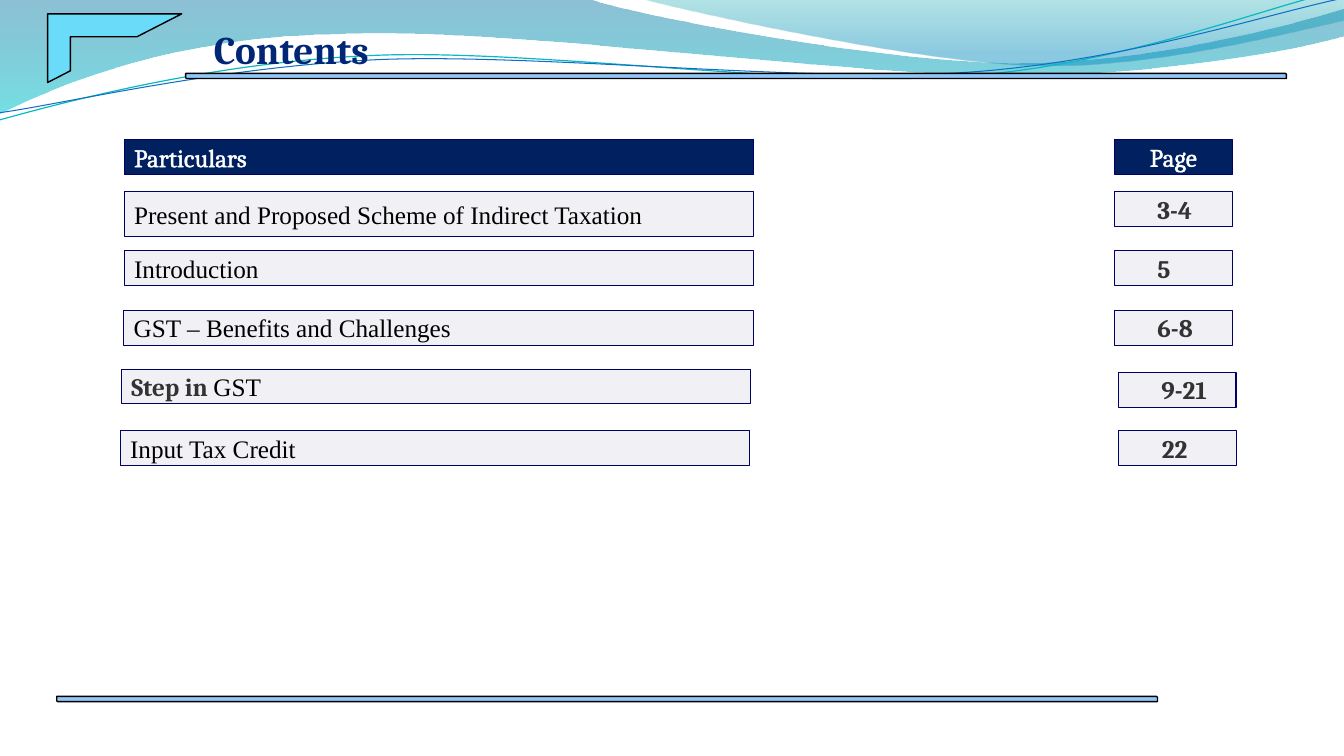
from dataclasses import dataclass

from lxml.etree import SubElement
from pptx import Presentation
from pptx.dml.color import RGBColor
from pptx.enum.shapes import MSO_SHAPE
from pptx.enum.text import MSO_ANCHOR, MSO_AUTO_SIZE, PP_ALIGN
from pptx.oxml import parse_xml
from pptx.oxml.ns import nsdecls, qn
from pptx.shapes.autoshape import Shape
from pptx.slide import Slide
from pptx.text.text import _Run as Span
from pptx.util import Cm, Pt

Point = tuple[float, float]


@dataclass(frozen=True)
class Theme:
    serif: str = "Cambria"
    body: str = "Times New Roman"
    title: str = "002776"
    header: str = "002060"
    cell: str = "F1F1F5"
    border: str = "000066"
    white: str = "FFFFFF"
    black: str = "000000"
    grey: str = "333333"
    bar: str = "91C6F7"
    corner: str = "6BDBFA"
    title_size: int = 28
    text_size: int = 18


THEME = Theme()


@dataclass(frozen=True)
class Wave:
    start: Point
    segments: tuple[tuple[Point, ...], ...]  # one point: line, three: Bézier curve
    stops: tuple[tuple[int, str, int], ...] = ()  # position, colour, opacity
    line: str = ""
    width: float = 0


@dataclass(frozen=True)
class Words:
    text: str
    font: str = THEME.body
    colour: str = THEME.black
    bold: bool = False


@dataclass(frozen=True)
class Entry:
    words: tuple[Words, ...]
    left: float
    top: float
    page: str
    page_left: float
    page_top: float
    height: float = 0.88


ROW_WIDTH, PAGE_WIDTH, ROW_HEIGHT = 15.86, 2.96, 0.88
INSET, PAGE_INSET = 0.25, 1.08

WAVES = (
    Wave((0, 0), (
        ((14.91, 0),),
        ((16.1, 0.43), (22.48, 1.6), (25.68, 1.6)),
        ((28.91, 1.6), (32.46, 0.66), (33.87, 0.23)),
        ((33.87, 0.91),),
        ((33.3, 1.12), (29.46, 1.93), (25.25, 1.9)),
        ((21.06, 1.9), (12.93, 0.71), (8.71, 0.86)),
        ((4.37, 0.91), (1.55, 2.11), (0, 2.87)),
    ), stops=((0, "0074A1", 45), (100, "00C6CF", 55))),
    Wave((16.23, 0), (
        ((17.25, 0.28), (23.09, 1.57), (26.04, 1.65)),
        ((28.98, 1.75), (32.56, 0.81), (33.87, 0.53)),
        ((33.87, 0),),
    ), stops=((0, "00A1A9", 30), (80, "008BBF", 45))),
    Wave((0, 3.02), (
        ((1.63, 2.57), (5.36, 1.57), (9.37, 1.4)),
        ((13.39, 1.22), (20.07, 2.21), (24.13, 1.93)),
        ((28.19, 1.68), (31.8, 0.2), (33.81, -0.25)),
    ), line="0AB8BF", width=0.85),
    Wave((0, 2.84), (
        ((1.6, 2.62), (5.54, 1.68), (9.6, 1.5)),
        ((13.64, 1.35), (20.22, 2.08), (24.26, 1.83)),
        ((28.32, 1.57), (31.88, 0.36), (33.87, -0.05)),
    ), line="0F6FC6", width=0.75),
)

ENTRIES = (
    Entry((Words("Present and Proposed Scheme of Indirect Taxation"),),
          3.13, 4.83, "3-4", 28.09, 4.83, height=1.14),
    Entry((Words("Introduction"),), 3.13, 6.32, "5", 28.09, 6.32),
    Entry((Words("GST – Benefits and Challenges"),), 3.12, 7.82, "6-8", 28.09, 7.82),
    Entry((Words("Step in ", THEME.serif, THEME.grey, True), Words("GST")),
          3.06, 9.3, "9-21", 28.19, 9.38),
    Entry((Words("Input Tax Credit"),), 3.03, 10.86, "22", 28.2, 10.85),
)


def colour(value: str) -> RGBColor:
    return RGBColor.from_string(value)


def fill_gradient(shape: Shape, stops: tuple[tuple[int, str, int], ...]) -> None:
    shape.fill.background()
    marks = "".join(
        f'<a:gs pos="{position * 1000}"><a:srgbClr val="{value}">'
        f'<a:alpha val="{opacity * 1000}"/></a:srgbClr></a:gs>'
        for position, value, opacity in stops)
    gradient = parse_xml(f'<a:gradFill {nsdecls("a")} rotWithShape="1"><a:gsLst>{marks}'
                         '</a:gsLst><a:lin ang="5400000" scaled="0"/></a:gradFill>')
    properties = shape._element.spPr
    properties.replace(properties.find(qn("a:noFill")), gradient)


def bend_segments(shape: Shape, segments: tuple[tuple[Point, ...], ...]) -> None:
    """Turn the straight sides that have control points into Bézier curves."""
    sides = list(shape._element.spPr.iter(qn("a:lnTo")))
    for side, segment in zip(sides, segments):
        if len(segment) == 3:
            bend = parse_xml(f'<a:cubicBezTo {nsdecls("a")}/>')
            for x, y in segment:
                SubElement(bend, qn("a:pt"), x=str(Cm(x) - shape.left),
                           y=str(Cm(y) - shape.top))
            side.getparent().replace(side, bend)


def draw_wave(page: Slide, wave: Wave) -> None:
    start, *ends = [(Cm(x), Cm(y)) for x, y in
                    (wave.start, *(segment[-1] for segment in wave.segments))]
    builder = page.shapes.build_freeform(*start)
    builder.add_line_segments(ends, close=bool(wave.stops))
    shape = builder.convert_to_shape()
    bend_segments(shape, wave.segments)
    shape.shadow.inherit = False
    if wave.stops:
        fill_gradient(shape, wave.stops)
        shape.line.fill.background()
    else:
        shape.fill.background()
        shape.line.color.rgb = colour(wave.line)
        shape.line.width = Pt(wave.width)


def draw_shape(page: Slide, kind: MSO_SHAPE, left: float, top: float, width: float,
               height: float, fill: str, line: str, weight: float) -> Shape:
    shape = page.shapes.add_shape(kind, Cm(left), Cm(top), Cm(width), Cm(height))
    shape.shadow.inherit = False
    shape.fill.solid()
    shape.fill.fore_color.rgb = colour(fill)
    shape.line.color.rgb = colour(line)
    shape.line.width = Pt(weight)
    return shape


def format_span(span: Span, words: Words, size: int) -> None:
    span.font.name, span.font.size, span.font.bold = words.font, Pt(size), words.bold
    span.font.color.rgb = colour(words.colour)


def draw_cell(page: Slide, words: tuple[Words, ...], left: float, top: float, width: float,
              height: float = ROW_HEIGHT, fill: str = THEME.cell, inset: float = INSET,
              align: PP_ALIGN = PP_ALIGN.LEFT) -> Shape:
    box = draw_shape(page, MSO_SHAPE.RECTANGLE, left, top, width, height,
                     fill, THEME.border, 0.75)
    frame = box.text_frame
    frame.word_wrap = True
    frame.vertical_anchor = MSO_ANCHOR.MIDDLE
    frame.margin_left, frame.margin_right = Cm(inset), Cm(INSET)
    frame.margin_top = frame.margin_bottom = 0
    para = frame.paragraphs[0]
    para.alignment = align
    for part in words:
        span = para.add_run()
        span.text = part.text
        format_span(span, part, THEME.text_size)
    return box


def draw_header(page: Slide, text: str, left: float, top: float, width: float,
                align: PP_ALIGN) -> None:
    words = (Words(text, THEME.serif, THEME.white),)
    box = draw_cell(page, words, left, top, width, fill=THEME.header, align=align)
    # White outline around the letters
    properties = box.text_frame.paragraphs[0].runs[0].font._element
    outline = SubElement(properties, qn("a:ln"), w=str(Pt(1.45)))
    SubElement(SubElement(outline, qn("a:solidFill")), qn("a:srgbClr"), val=THEME.white)
    properties.insert(0, outline)


def draw_title(page: Slide) -> None:
    title = page.shapes.title
    title.left, title.top, title.width, title.height = Cm(5.14), Cm(0.78), Cm(28), Cm(0.91)
    frame = title.text_frame
    frame.text = "Contents"
    frame.auto_size = MSO_AUTO_SIZE.NONE
    frame.vertical_anchor = MSO_ANCHOR.TOP
    frame.margin_left, frame.margin_top, frame.margin_bottom = Cm(INSET), Cm(0.13), 0
    para = frame.paragraphs[0]
    para.alignment, para.line_spacing = PP_ALIGN.LEFT, Pt(26)
    format_span(para.runs[0], Words("", THEME.serif, THEME.title, True), THEME.title_size)
    page.shapes._spTree.append(title._element)  # in front of the waves


def main() -> None:
    deck = Presentation()
    deck.slide_width, deck.slide_height = Cm(33.87), Cm(19.05)
    page = deck.slides.add_slide(deck.slide_layouts[5])

    # Waves, title and frame
    for wave in WAVES:
        draw_wave(page, wave)
    draw_title(page)
    draw_shape(page, MSO_SHAPE.HALF_FRAME, 1.2, 0.35, 3.38, 1.73,
               THEME.corner, THEME.black, 1)
    for left, top in ((1.43, 17.55), (4.68, 1.85)):
        draw_shape(page, MSO_SHAPE.SNIP_2_DIAG_RECTANGLE, left, top, 27.74, 0.13,
                   THEME.bar, THEME.black, 1)

    # Contents list
    draw_header(page, "Particulars", 3.13, 3.52, ROW_WIDTH, PP_ALIGN.LEFT)
    draw_header(page, "Page", 28.09, 3.51, PAGE_WIDTH, PP_ALIGN.CENTER)
    for entry in ENTRIES:
        draw_cell(page, entry.words, entry.left, entry.top, ROW_WIDTH, entry.height)
        number = (Words(entry.page, THEME.serif, THEME.grey, True),)
        draw_cell(page, number, entry.page_left, entry.page_top, PAGE_WIDTH, inset=PAGE_INSET)

    deck.save("out.pptx")


if __name__ == "__main__":
    main()
